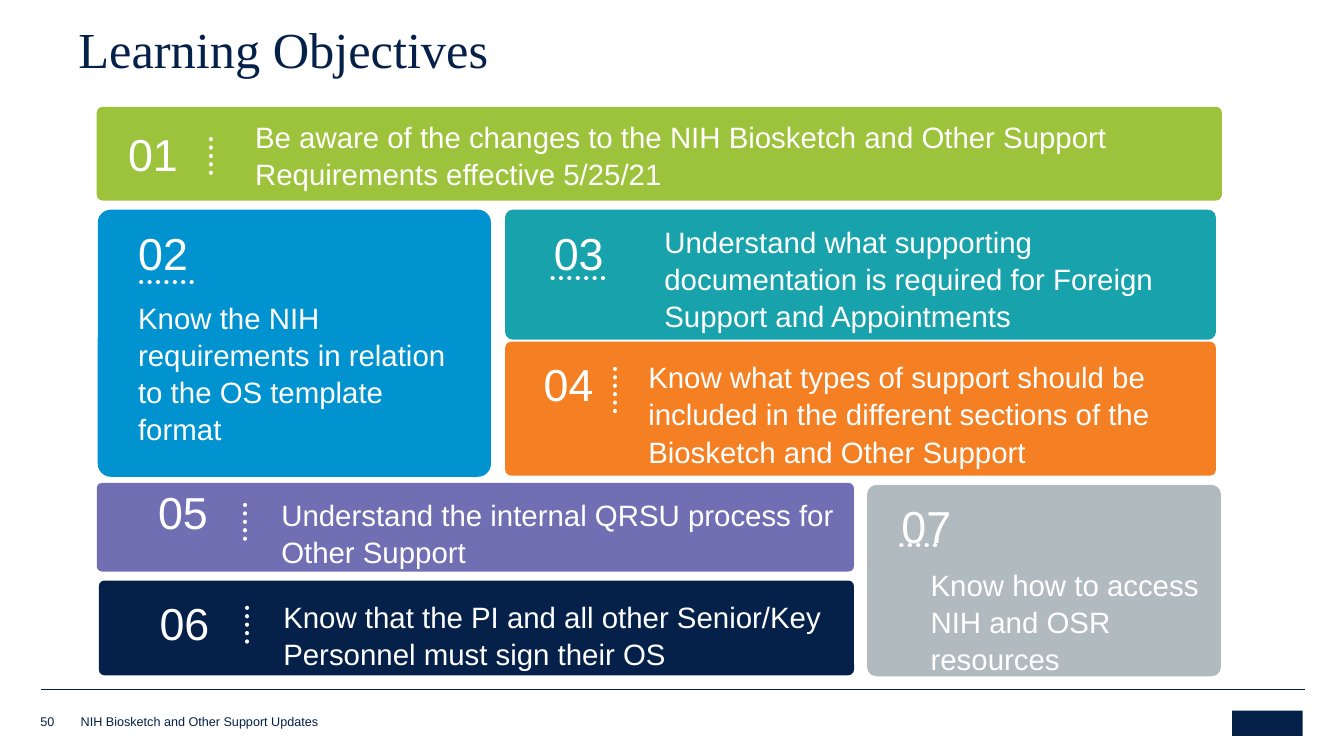
from lxml import etree
from pptx import Presentation
from pptx.dml.color import RGBColor
from pptx.enum.dml import MSO_LINE
from pptx.enum.shapes import MSO_CONNECTOR, MSO_SHAPE
from pptx.enum.text import MSO_ANCHOR, PP_ALIGN
from pptx.oxml.ns import qn
from pptx.util import Inches, Pt

ROUND, RECT = MSO_SHAPE.ROUNDED_RECTANGLE, MSO_SHAPE.RECTANGLE
STRAIGHT, DOTS = MSO_CONNECTOR.STRAIGHT, MSO_LINE.ROUND_DOT
TOP, MIDDLE, BOTTOM = MSO_ANCHOR.TOP, MSO_ANCHOR.MIDDLE, MSO_ANCHOR.BOTTOM
LEFT, CENTER = PP_ALIGN.LEFT, PP_ALIGN.CENTER

NAVY, WHITE = "052049", "FFFFFF"
SANS, SERIF = "Arial", "Times New Roman"
CARD_INSETS = (0.13, 0.07)
LINE_SPACING = 1.05

TITLE = "Learning Objectives"
PAGE = "50"
FOOTER = "NIH Biosketch and Other Support Updates"
FOOTER_Y = 6.84
FOOTER_RULES = [(0.53, 12.8), (0.41, 12.94)]
LOGO_BOX = (12.22, 7.05, 0.7, 0.25)

OBJECTIVES = [
    dict(text="Be aware of the changes to the NIH Biosketch and Other Support "
              "Requirements effective 5/25/21",
         color="9DC23B", card=(0.96, 1.06, 11.16, 0.93), corner=0.063,
         dots=(2.09, 1.38, 0, 0.4), body=(2.4, 1.13, 9.28, 0.8), anchor=MIDDLE,
         number=(1.14, 1.16, 0.8, 0.5), align=LEFT),
    dict(text="Know the NIH requirements in relation to the OS template format",
         color="0093D0", card=(0.97, 2.08, 3.9, 2.65), corner=0.049,
         dots=(1.4, 2.8, 0.53, 0), body=(1.24, 2.89, 3.57, 1.98), anchor=TOP,
         number=(1.24, 2.14, 0.82, 0.53), align=LEFT),
    dict(text="Understand what supporting documentation is required for Foreign "
              "Support and Appointments",
         color="18A3AC", card=(5.01, 2.08, 7.05, 1.29), corner=0.06,
         dots=(5.48, 2.76, 0.53, 0), body=(6.46, 2.14, 5.73, 1.13), anchor=TOP,
         number=(5.33, 2.14, 0.82, 0.5), align=CENTER),
    dict(text="Know what types of support should be included in the different "
              "sections of the Biosketch and Other Support",
         color="F58024", card=(5.01, 3.39, 7.05, 1.33), corner=0.046,
         dots=(6.1, 3.66, 0, 0.49), body=(6.3, 3.48, 5.76, 1.04), anchor=TOP,
         number=(5.23, 3.44, 0.82, 0.63), align=CENTER),
    dict(text="Understand the internal QRSU process for Other Support",
         color="716FB3", card=(0.96, 4.79, 7.51, 0.88), corner=0.06,
         dots=(2.43, 5.01, 0, 0.4), body=(2.66, 4.84, 5.81, 0.65), anchor=TOP,
         number=(1.33, 4.71, 0.97, 0.5), align=CENTER),
    dict(text="Know that the PI and all other Senior/Key Personnel must sign their OS",
         color=NAVY, card=(0.98, 5.76, 7.49, 0.94), corner=0.06,
         dots=(2.45, 6.03, 0, 0.34), body=(2.68, 5.86, 5.79, 0.78), anchor=TOP,
         number=(1.35, 5.81, 0.96, 0.43), align=CENTER),
    dict(text="Know how to access NIH and OSR resources",
         color="B1BABF", card=(8.6, 4.81, 3.51, 1.9), corner=0.049,
         dots=(8.94, 5.41, 0.41, 0), body=(9.1, 5.54, 3.16, 1.03), anchor=TOP,
         number=(8.81, 4.85, 0.85, 0.56), align=LEFT),
]


def rgb(value):
    return RGBColor.from_string(value)


def add_block(shapes, kind, box, color):
    sp = shapes.add_shape(kind, *map(Inches, box))
    sp.shadow.inherit = False
    sp.fill.solid()
    sp.fill.fore_color.rgb = rgb(color)
    sp.line.fill.background()
    return sp


def add_rule(shapes, x, y, dx, dy, color, width):
    line = shapes.add_connector(STRAIGHT, *map(Inches, (x, y, x + dx, y + dy)))
    line.line.color.rgb = rgb(color)
    line.line.width = Pt(width)
    etree.SubElement(line._element.spPr, qn("a:effectLst"))
    return line


def add_text(shapes, text, box, size, color, font=SANS, insets=(0, 0),
             anchor=TOP, align=LEFT, spacing=1.0):
    tf = shapes.add_textbox(*map(Inches, box)).text_frame
    tf.word_wrap = True
    tf.vertical_anchor = anchor
    tf.margin_left = tf.margin_right = Inches(insets[0])
    tf.margin_top = tf.margin_bottom = Inches(insets[1])
    p = tf.paragraphs[0]
    p.text = text
    p.alignment = align
    p.line_spacing = spacing
    f = p.runs[0].font
    f.name, f.size, f.color.rgb = font, Pt(size), rgb(color)


def add_objective(shapes, number, item):
    group = shapes.add_group_shape().shapes
    card = add_block(group, ROUND, item["card"], item["color"])
    card.adjustments[0] = item["corner"]
    dots = add_rule(group, *item["dots"], WHITE, 3)
    dots.line.dash_style = DOTS
    dots.line._get_or_add_ln().set("cap", "rnd")
    add_text(group, item["text"], item["body"], 21, WHITE, insets=CARD_INSETS,
             anchor=item["anchor"], spacing=LINE_SPACING)
    add_text(group, f"{number:02d}", item["number"], 32, WHITE, insets=CARD_INSETS,
             align=item["align"], spacing=LINE_SPACING)


def main():
    prs = Presentation()
    prs.slide_width, prs.slide_height = Inches(13.33), Inches(7.5)
    s = prs.slides.add_slide(prs.slide_layouts[6])
    for start, end in FOOTER_RULES:
        add_rule(s.shapes, start, FOOTER_Y, end - start, 0, NAVY, 0.25)
    add_block(s.shapes, RECT, LOGO_BOX, NAVY)
    add_text(s.shapes, PAGE, (0.4, 7.06, 0.36, 0.17), 9, NAVY, anchor=BOTTOM)
    add_text(s.shapes, FOOTER, (0.8, 7.08, 6.29, 0.15), 9, NAVY, anchor=BOTTOM)
    add_text(s.shapes, TITLE, (0.68, 0.22, 11.5, 1.45), 36, NAVY, SERIF,
             insets=(0.1, 0.05), spacing=0.85)
    for number, item in enumerate(OBJECTIVES, 1):
        add_objective(s.shapes, number, item)
    prs.save("out.pptx")


if __name__ == "__main__":
    main()
